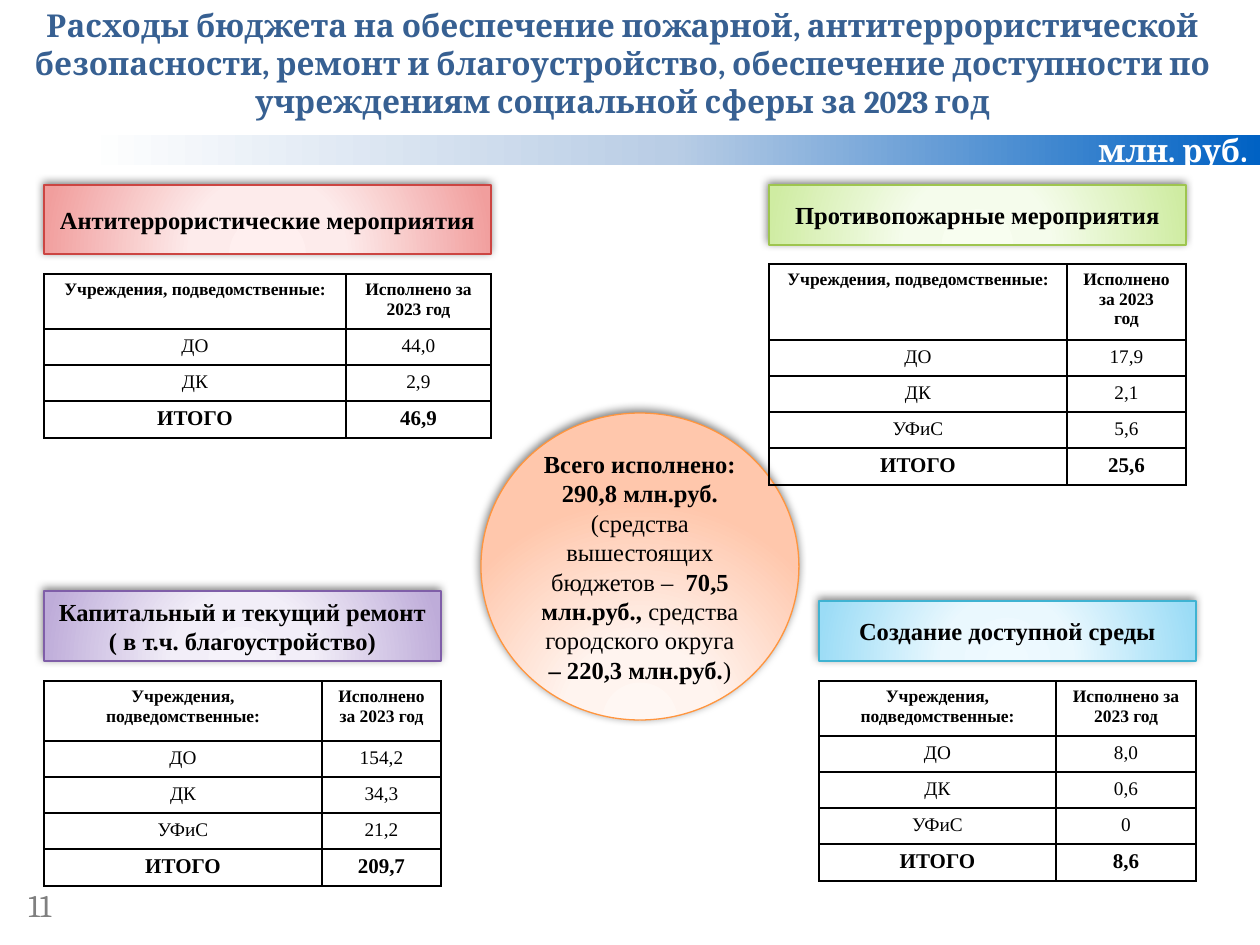
from lxml.etree import SubElement
from pptx import Presentation
from pptx.dml.color import RGBColor
from pptx.enum.shapes import MSO_SHAPE
from pptx.enum.text import MSO_ANCHOR, PP_ALIGN
from pptx.oxml import parse_xml
from pptx.oxml.ns import nsdecls, qn
from pptx.util import Pt

SCALE = 914400 / 126
SERIF, ROMAN = "Cambria", "Times New Roman"
COLORS = {
    "title": "376092", "page": "808080", "white": "FFFFFF", "black": "000000",
}
BAR = [(0, "0062C4"), (50, "B9CDE5"), (100, "FFFFFF")]
# Each theme: line colour, then the glow from centre to edge
THEMES = {
    "red": ("CC4542", "FFEFEF", "FDEBEB", "F19E9D"),
    "blue": ("3FB3D2", "EFFAFF", "EAF8FE", "9BDCF6"),
    "violet": ("7F5EA8", "F5F2FA", "F2EEF8", "BEACD9"),
    "green": ("9EC54F", "F8FEF0", "F5FCEC", "CFECA2"),
    "orange": ("FF953E", "FFF7F3", "FFF4EF", "FFC7AC"),
}
HEAD = "Учреждения, подведомственные:"
DONE = "Исполнено за 2023 год"
GLOW = ('<a:path path="circle"><a:fillToRect l="50000" t="155000" '
        'r="50000" b="-55000"/></a:path>')
SHADOW = (f'<a:effectLst {nsdecls("a")}><a:outerShdw blurRad="63500" '
          'dist="25400" dir="14700000" rotWithShape="0"><a:srgbClr '
          'val="000000"><a:alpha val="50000"/></a:srgbClr></a:outerShdw>'
          '</a:effectLst>')


def px(*nums):
    return [round(n * SCALE) for n in nums]


def grade(shape, stops, shade):
    """Fill a shape with a gradient of (percent, colour) stops."""
    marks = "".join(f'<a:gs pos="{pos * 1000}"><a:srgbClr val="{hue}"/></a:gs>'
                    for pos, hue in stops)
    fill = parse_xml(f'<a:gradFill {nsdecls("a")} rotWithShape="1">'
                     f'<a:gsLst>{marks}</a:gsLst>{shade}</a:gradFill>')
    shape._element.spPr.find(qn("a:prstGeom")).addnext(fill)


def edge(cell):
    """Draw a thin black border round a table cell."""
    props = cell._tc.get_or_add_tcPr()
    for side in ("a:lnL", "a:lnR", "a:lnT", "a:lnB"):
        line = SubElement(props, qn(side), w="12700")
        fill = SubElement(line, qn("a:solidFill"))
        SubElement(fill, qn("a:srgbClr"), val=COLORS["black"])


class Board:
    """Holds the slide and the style of its elements."""

    def __init__(self, slide):
        self.slide = slide
        self.shapes = slide.shapes

    def style(self, para, size, color="black", bold=True, font=ROMAN,
              align=PP_ALIGN.CENTER):
        para.alignment = align
        para.font.size, para.font.bold, para.font.name = Pt(size), bold, font
        para.font.color.rgb = RGBColor.from_string(COLORS[color])

    def title(self, text, box):
        head = self.shapes.title
        head.left, head.top, head.width, head.height = px(*box)
        frame = head.text_frame
        frame.text = text
        frame.vertical_anchor = MSO_ANCHOR.TOP
        self.style(frame.paragraphs[0], 18, "title", font=SERIF)

    def label(self, text, box):
        frame = self.shapes.add_textbox(*px(*box)).text_frame
        frame.word_wrap = True
        frame.text = text
        self.style(frame.paragraphs[0], 18, "page", False, SERIF,
                   PP_ALIGN.LEFT)

    def shape(self, kind, box):
        item = self.shapes.add_shape(kind, *px(*box))
        item.text_frame.word_wrap = True
        item.text_frame.vertical_anchor = MSO_ANCHOR.MIDDLE
        return item

    def bar(self, text, box):
        item = self.shape(MSO_SHAPE.RECTANGLE, box)
        item.shadow.inherit = False
        item.line.fill.background()
        grade(item, BAR, '<a:lin ang="10800000" scaled="0"/>')
        item.text_frame.text = text
        self.style(item.text_frame.paragraphs[0], 18, "white", font=SERIF,
                   align=PP_ALIGN.RIGHT)

    def card(self, lines, box, theme, kind=MSO_SHAPE.RECTANGLE):
        """Add a glowing shape; each line is a list of (text, bold) runs."""
        item = self.shape(kind, box)
        line, *glow = THEMES[theme]
        grade(item, zip((0, 34, 100), glow), GLOW)
        item.line.color.rgb = RGBColor.from_string(line)
        item.line.width = Pt(0.75)
        item._element.spPr.append(parse_xml(SHADOW))
        frame = item.text_frame
        for num, runs in enumerate(lines):
            para = frame.add_paragraph() if num else frame.paragraphs[0]
            self.style(para, 14, bold=runs[0][1])
            for text, bold in runs:
                run = para.add_run()
                run.text = text
                if bold != runs[0][1]:
                    run.font.bold = bold

    def table(self, spot, cols, top, rows, done=DONE):
        """Add a table with a header of height top and a total row last."""
        rows = [(HEAD, done), *rows]
        highs = [top] + [36] * (len(rows) - 2) + [37]
        grid = self.shapes.add_table(
            len(rows), 2, *px(*spot, sum(cols), sum(highs))).table
        grid.first_row = grid.horz_banding = False
        for col, wide in zip(grid.columns, px(*cols)):
            col.width = wide
        last = len(rows) - 1
        for num, (row, high) in enumerate(zip(grid.rows, px(*highs))):
            row.height = high
            size = {0: 10, last: 12}.get(num, 11)
            for cell, text in zip(row.cells, rows[num]):
                edge(cell)
                cell.fill.background()
                para = cell.text_frame.paragraphs[0]
                para.text = text
                self.style(para, size, bold=num in (0, last))


def main():
    deck = Presentation()
    deck.slide_width, deck.slide_height = px(1260, 945)
    board = Board(deck.slides.add_slide(deck.slide_layouts[5]))

    board.bar("млн. руб.", (84, 135, 1176, 30))
    board.title("Расходы бюджета на обеспечение пожарной, "
                "антитеррористической безопасности, ремонт и "
                "благоустройство, обеспечение доступности по учреждениям "
                "социальной сферы за 2023 год", (15, 0, 1216, 127))

    for text, box, theme in (
        ("Антитеррористические мероприятия", (44, 185, 447, 69), "red"),
        ("Создание доступной среды", (819, 601, 377, 60), "blue"),
        ("Капитальный и текущий ремонт ( в т.ч. благоустройство)",
         (44, 591, 397, 70), "violet"),
        ("Противопожарные мероприятия", (769, 185, 417, 60), "green"),
    ):
        board.card([[(text, True)]], box, theme)

    board.card([
        [("Всего исполнено:", True)],
        [("290,8 млн.руб.", True)],
        [("(средства вышестоящих бюджетов – ", False),
         (" 70,5 млн.руб., ", True),
         ("средства городского округа ", False),
         ("– 220,3 млн.руб.", True), (")", False)],
    ], (481, 413, 318, 307), "orange", MSO_SHAPE.OVAL)

    board.table((44, 274), (302, 145), 55,
                [("ДО", "44,0"), ("ДК", "2,9"), ("ИТОГО", "46,9")])
    board.table((769, 264), (298, 119), 76,
                [("ДО", "17,9"), ("ДК", "2,1"), ("УФиС", "5,6"),
                 ("ИТОГО", "25,6")], "Исполнено\vза 2023\vгод")
    board.table((44, 681), (278, 119), 60,
                [("ДО", "154,2"), ("ДК", "34,3"), ("УФиС", "21,2"),
                 ("ИТОГО", "209,7")])
    board.table((819, 681), (237, 140), 55,
                [("ДО", "8,0"), ("ДК", "0,6"), ("УФиС", "0"),
                 ("ИТОГО", "8,6")])
    board.label("11", (16, 880, 57, 50))
    deck.save("out.pptx")


if __name__ == "__main__":
    main()
